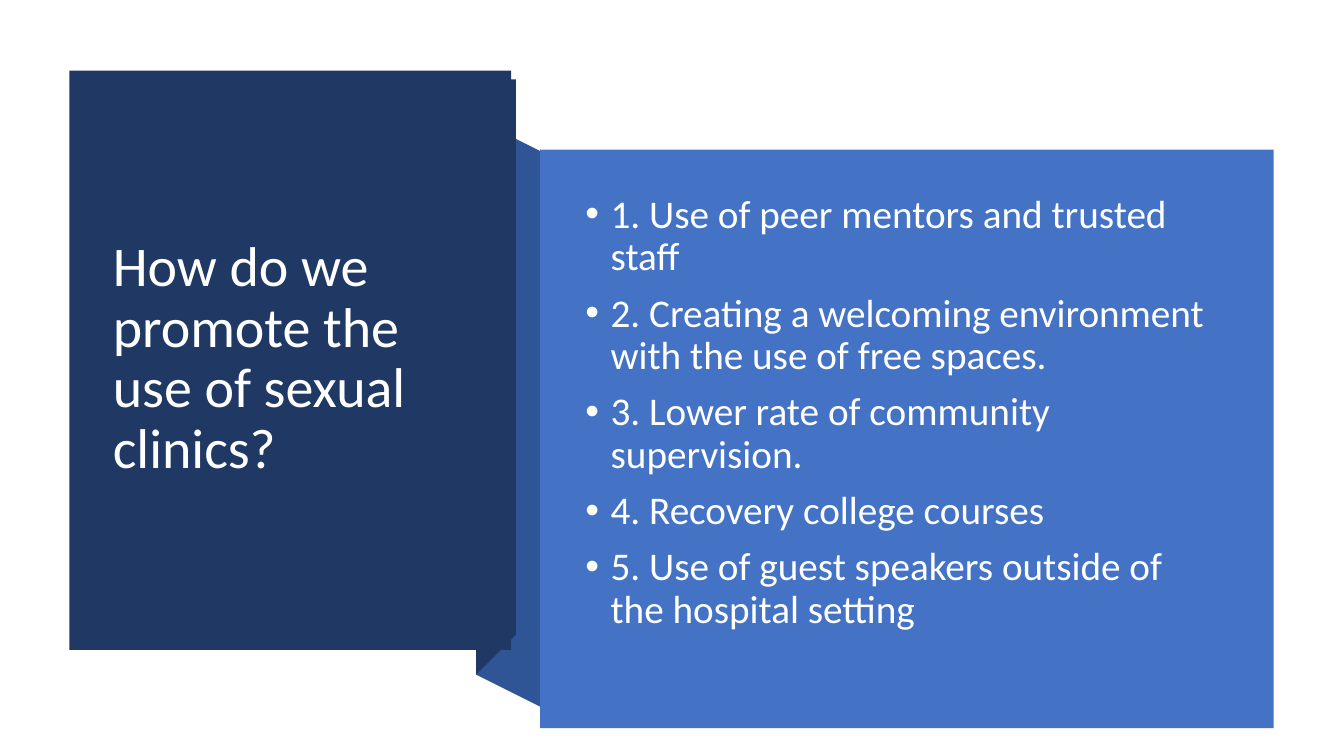
from lxml.etree import SubElement
from pptx import Presentation
from pptx.dml.color import RGBColor
from pptx.enum.shapes import MSO_SHAPE
from pptx.enum.text import MSO_ANCHOR, MSO_AUTO_SIZE, PP_ALIGN
from pptx.oxml.ns import qn
from pptx.util import Cm, Pt

NAVY = RGBColor(0x20, 0x38, 0x64)
MID_BLUE = RGBColor(0x2F, 0x55, 0x97)
BLUE = RGBColor(0x44, 0x72, 0xC4)
WHITE = RGBColor(0xFF, 0xFF, 0xFF)

POINTS = [
    "1. Use of peer mentors and trusted staff",
    "2. Creating a welcoming environment with the use of free spaces.",
    "3. Lower rate of community supervision.",
    "4. Recovery college courses",
    "5. Use of guest speakers outside of the hospital setting",
]


def paint(sp, color):
    sp.fill.solid()
    sp.fill.fore_color.rgb = color
    sp.line.fill.background()
    sp.shadow.inherit = False


def add_text(p, text, size):
    p.alignment = PP_ALIGN.LEFT
    p.line_spacing = 0.9
    r = p.add_run()
    r.text = text
    r.font.size = Pt(size)
    r.font.name = "Calibri"
    r.font.color.rgb = WHITE


prs = Presentation()
prs.slide_width, prs.slide_height = Cm(33.87), Cm(19.05)
s = prs.slides.add_slide(prs.slide_layouts[5])

# Folded ribbon behind the two panels
folds = [
    (MID_BLUE, [(13.61, 18.36), (11.51, 17.07), (11.51, 2.51), (13.61, 3.81)]),
    (NAVY, [(12.85, 16.36), (11.51, 17.09), (11.51, 2.49), (12.85, 1.75)]),
]
for color, corners in folds:
    builder = s.shapes.build_freeform(*corners[0], scale=Cm(1))
    builder.add_line_segments(corners[1:], close=True)
    paint(builder.convert_to_shape(), color)

panels = [
    (NAVY, (1.75, 1.78, 11.13, 14.6)),
    (BLUE, (13.61, 3.77, 18.49, 14.58)),
]
for color, box in panels:
    paint(s.shapes.add_shape(MSO_SHAPE.RECTANGLE, *map(Cm, box)), color)

# Title, brought in front of the panels
title = s.shapes.title
s.shapes._spTree.append(title._element)
title.left, title.top, title.width, title.height = map(Cm, (2.59, 2.72, 9.42, 12.67))
tf = title.text_frame
tf.word_wrap = True
tf.auto_size = MSO_AUTO_SIZE.NONE
tf.vertical_anchor = MSO_ANCHOR.MIDDLE
add_text(tf.paragraphs[0], "How do we promote the use of sexual clinics?", 40)

# Bulleted answers
answers = s.shapes.add_textbox(*map(Cm, (14.5, 4.78, 16.54, 12.04)))
tf = answers.text_frame
tf.word_wrap = True
tf.vertical_anchor = MSO_ANCHOR.TOP
for i, text in enumerate(POINTS):
    p = tf.add_paragraph() if i else tf.paragraphs[0]
    add_text(p, text, 28)
    p.space_before = Pt(10 if i else 0)
    pPr = p._p.get_or_add_pPr()
    pPr.set("marL", str(Cm(0.64)))
    pPr.set("indent", str(-Cm(0.64)))
    SubElement(pPr, qn("a:buFont"), typeface="Arial")
    SubElement(pPr, qn("a:buChar"), char="•")

prs.save("out.pptx")
